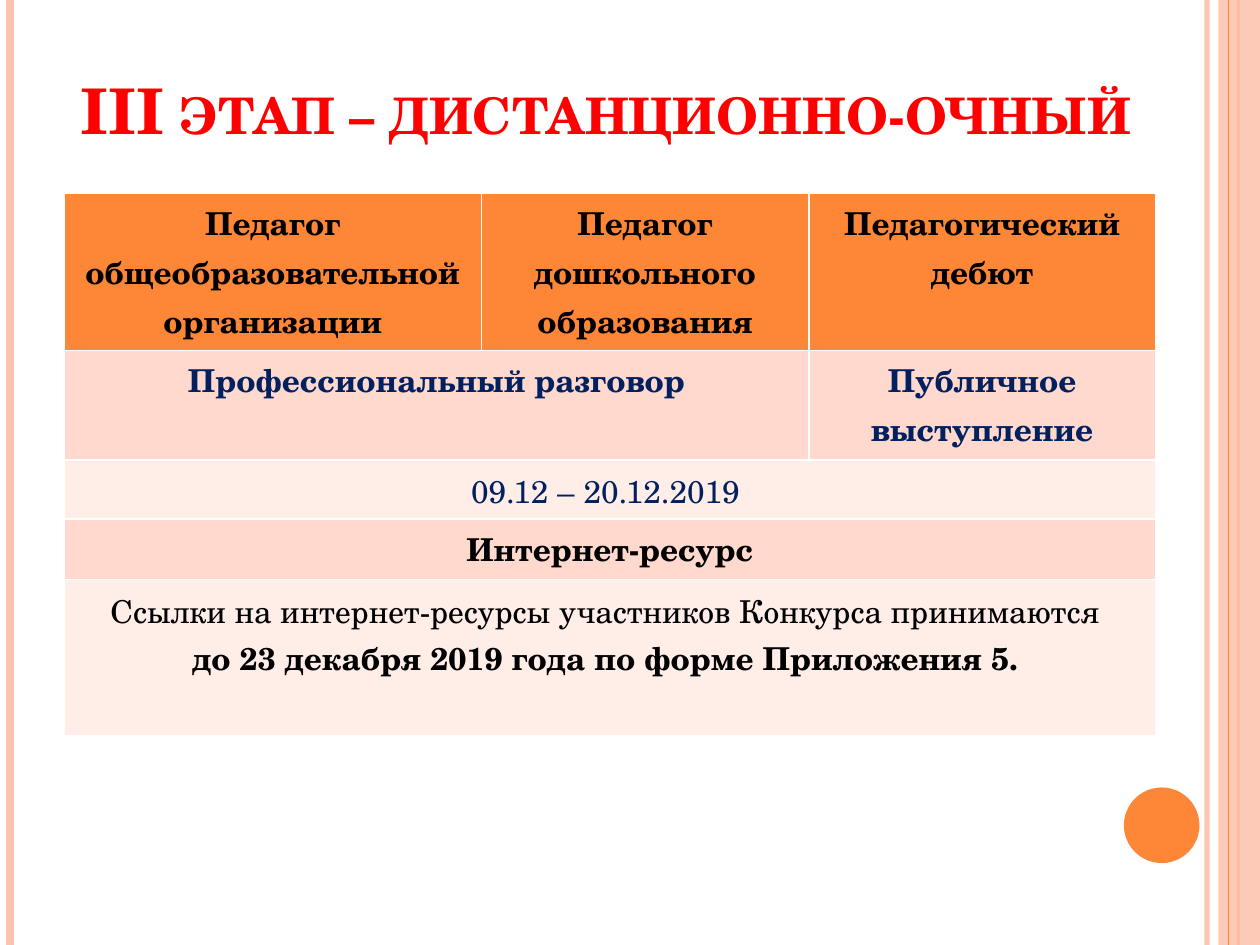
from lxml.etree import SubElement
from pptx import Presentation
from pptx.dml.color import RGBColor
from pptx.enum.shapes import MSO_CONNECTOR as Conn, MSO_SHAPE as Form
from pptx.enum.text import MSO_ANCHOR as Anchor, PP_ALIGN as Align
from pptx.oxml.ns import qn
from pptx.util import Inches, Pt

FONT = "TeX Gyre Schola"
ORANGE, PEACH = "FE8637", "FEC3AE"
ROSE, PALE = "FFD9CE", "FFEDE8"
RED, NAVY, BLACK = "FF0000", "002060", "000000"


def paint(target, color, alpha=100):
    """Colour a font, or a fill that has been made solid."""
    target.rgb = RGBColor.from_string(color)
    if alpha < 100:
        node = target._xFill.find(qn("a:srgbClr"))
        SubElement(node, qn("a:alpha")).set("val", str(alpha * 1000))


class Board:
    def __init__(self, slide):
        self.slide = slide
        self.shapes = slide.shapes

    def rule(self, x, color, width, alpha=100):
        line = self.shapes.add_connector(
            Conn.STRAIGHT, Inches(x), 0, Inches(x), Inches(7.5))
        line.line.width = Pt(width)
        line.line.fill.solid()
        paint(line.line.fill.fore_color, color)
        props = line._element.spPr
        if alpha < 100:
            node = props.find(".//" + qn("a:srgbClr"))
            SubElement(node, qn("a:alpha")).set("val", str(alpha * 1000))
        SubElement(props, qn("a:effectLst"))

    def shape(self, form, box, color, alpha=100):
        item = self.shapes.add_shape(form, *map(Inches, box))
        item.shadow.inherit = False
        item.line.fill.background()
        item.fill.solid()
        paint(item.fill.fore_color, color)
        if alpha < 100:
            node = item._element.spPr.find(".//" + qn("a:srgbClr"))
            SubElement(node, qn("a:alpha")).set("val", str(alpha * 1000))

    def run(self, para, text, size, color, bold):
        para.alignment = Align.CENTER
        run = para.add_run()
        run.text = text
        font = run.font
        font.name, font.size, font.bold = FONT, Pt(size), bold
        paint(font.color, color)
        return run

    def title(self, box, text):
        frame = self.shapes.add_textbox(*map(Inches, box)).text_frame
        frame.word_wrap = True
        frame.vertical_anchor = Anchor.BOTTOM
        run = self.run(frame.paragraphs[0], text, 36, RED, True)
        run.font._element.set("cap", "small")

    def cell(self, cell, fill, color, lines):
        cell.fill.solid()
        paint(cell.fill.fore_color, fill)
        cell.margin_top = cell.margin_bottom = Inches(0.04)
        frame = cell.text_frame
        for i, (text, bold) in enumerate(lines):
            para = frame.add_paragraph() if i else frame.paragraphs[0]
            para.line_spacing = Pt(28)
            self.run(para, text, 18, color, bold)

    def table(self, left, top, cols, rows):
        grid = self.shapes.add_table(
            len(rows), len(cols), Inches(left), Inches(top),
            Inches(sum(cols)), Inches(sum(row[0] for row in rows))).table
        for col, width in zip(grid.columns, cols):
            col.width = Inches(width)
        for r, (height, fill, color, cells) in enumerate(rows):
            grid.rows[r].height = Inches(height)
            c = 0
            for span, lines in cells:
                cell = grid.cell(r, c)
                if span > 1:
                    cell.merge(grid.cell(r, c + span - 1))
                self.cell(cell, fill, color, lines)
                c += span


def main():
    deck = Presentation()
    deck.slide_width, deck.slide_height = Inches(10), Inches(7.5)
    board = Board(deck.slides.add_slide(deck.slide_layouts[6]))

    # Side stripes and dot
    board.rule(9.58, PEACH, 3, 93)
    board.rule(0.08, PEACH, 4.5)
    board.rule(9.83, ORANGE, 1.5)
    board.shape(Form.RECTANGLE, (9.67, 0, 0.33, 7.5), PEACH, 87)
    board.rule(9.75, ORANGE, 0.75)
    board.shape(Form.OVAL, (8.92, 6.25, 0.6, 0.6), ORANGE)

    # Title
    board.title((0.28, -0.03, 9.06, 1.25), "III этап – дистанционно-очный")

    # Stage table: height, fill, text colour, cells as (span, lines)
    board.table(0.51, 1.53, (3.31, 2.6, 2.75), (
        (1.25, ORANGE, BLACK, (
            (1, [("Педагог общеобразовательной организации", True)]),
            (1, [("Педагог дошкольного образования", True)]),
            (1, [("Педагогический дебют", True)]))),
        (0.87, ROSE, NAVY, (
            (2, [("Профессиональный разговор", True)]),
            (1, [("Публичное выступление", True)]))),
        (0.47, PALE, NAVY, ((3, [("09.12 – 20.12.2019 ", False)]),)),
        (0.48, ROSE, BLACK, ((3, [("Интернет-ресурс", True)]),)),
        (1.24, PALE, BLACK, ((3, [
            ("Ссылки на интернет-ресурсы участников Конкурса принимаются ",
             False),
            ("до 23 декабря 2019 года по форме Приложения 5. ", True)]),)),
    ))
    deck.save("out.pptx")


if __name__ == "__main__":
    main()
